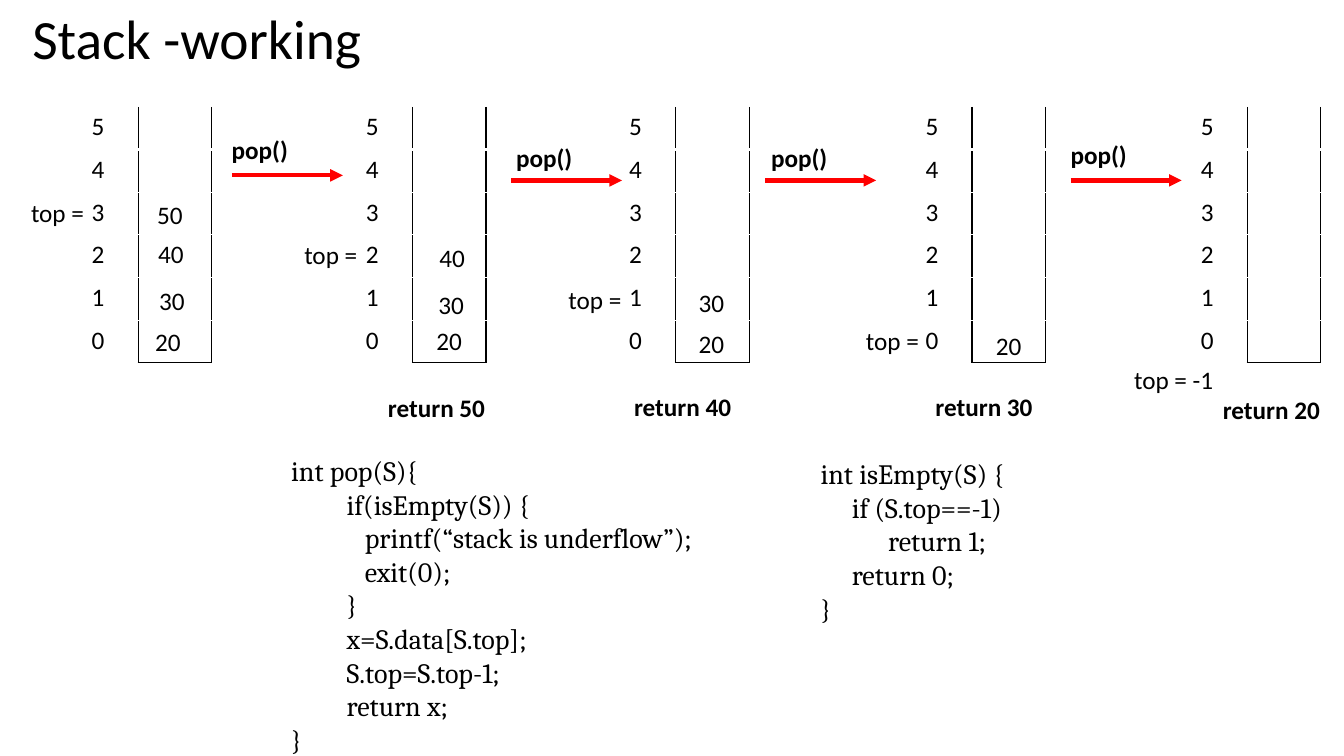
from lxml.etree import SubElement
from pptx import Presentation
from pptx.dml.color import RGBColor
from pptx.enum.shapes import MSO_CONNECTOR
from pptx.enum.text import MSO_ANCHOR, MSO_AUTO_SIZE, PP_ALIGN
from pptx.oxml import parse_xml
from pptx.oxml.ns import nsdecls, qn
from pptx.util import Pt

EMU_PER_PX = 9144
COLORS = {"ink": "000000", "paper": "FFFFFF", "arrow": "FF0000"}
SLOTS = 6
TABLE_TOP = 106

STACKS = [
    {"left": 81, "top": ("top =", 21, 191, 73), "values":
        [("50", 146, 193), ("40", 147, 232), ("30", 148, 278), ("20", 144, 319)]},
    {"left": 353, "top": ("top =", 292, 233, 73), "values":
        [("40", 426, 236), ("30", 425, 282), ("20", 423, 318)]},
    {"left": 614, "top": ("top =", 554, 277, 73), "values":
        [("30", 683, 280), ("20", 683, 321)]},
    {"left": 908, "top": ("top =", 849, 318, 73), "values": [("20", 978, 323)]},
    {"left": 1181, "top": ("top = -1", 1115, 357, 100), "values": []},
]
POPS = [(220, 128, 230, 174), (502, 136, 507, 179),
        (755, 136, 759, 179), (1052, 133, 1062, 179)]
RETURNS = [("return 50", 375, 384), ("return 40", 619, 383),
           ("return 30", 918, 383), ("return 20", 1203, 386)]
POP_CODE = [
    (0, "int pop(S){"),
    (55, "if(isEmpty(S)) {"),
    (73, "printf(“stack is underflow”);"),
    (73, "exit(0);"),
    (55, "}"),
    (55, "x=S.data[S.top];"),
    (55, "S.top=S.top-1;"),
    (55, "return x;"),
    (0, "}"),
]
EMPTY_CODE = [
    (0, "int isEmpty(S) {"),
    (31, "if (S.top==-1)"),
    (67, "return 1;"),
    (31, "return 0;"),
    (0, "}"),
]


def px(*lengths):
    return [length * EMU_PER_PX for length in lengths]


class StackSlide:
    def __init__(self, deck):
        self.page = deck.slides.add_slide(deck.slide_layouts[5])
        self.font = "Calibri"
        self.code_font = "Cambria"
        self.size = 18
        self.code_size = 20

    def add_span(self, para, text, size=None, font=None, bold=False):
        span = para.add_run()
        span.text = text
        span.font.name = font or self.font
        span.font.size = Pt(size or self.size)
        span.font.bold = bold
        span.font.color.rgb = RGBColor.from_string(COLORS["ink"])

    def title(self, text, *place):
        box = self.page.shapes.title
        box.left, box.top, box.width, box.height = px(*place)
        frame = box.text_frame
        frame.auto_size = MSO_AUTO_SIZE.NONE
        frame.vertical_anchor = MSO_ANCHOR.MIDDLE
        para = frame.paragraphs[0]
        para.alignment = PP_ALIGN.LEFT
        para.line_spacing = 0.9
        self.add_span(para, text, 39.6)

    def frame(self, *place, wrap=False):
        box = self.page.shapes.add_textbox(*px(*place))
        box.text_frame.word_wrap = wrap
        box.text_frame.auto_size = MSO_AUTO_SIZE.SHAPE_TO_FIT_TEXT
        return box.text_frame

    def label(self, text, left, top, width, bold=False):
        frame = self.frame(left, top, width, 40)
        self.add_span(frame.paragraphs[0], text, bold=bold)

    def code(self, lines, *place):
        frame = self.frame(*place, wrap=True)
        for number, (indent, text) in enumerate(lines):
            para = frame.add_paragraph() if number else frame.paragraphs[0]
            para._p.get_or_add_pPr().set("marL", str(indent * EMU_PER_PX))
            self.add_span(para, text, self.code_size, self.code_font)

    def arrow(self, left, top, length):
        line = self.page.shapes.add_connector(
            MSO_CONNECTOR.STRAIGHT, *px(left, top, left + length, top))
        line.line.color.rgb = RGBColor.from_string(COLORS["arrow"])
        line.line.width = Pt(3)
        SubElement(line.line._get_or_add_ln(), qn("a:tailEnd"), type="triangle")
        SubElement(line._element.spPr, qn("a:effectLst"))

    def borders(self, cell, edges):
        cell.fill.background()
        properties = cell._tc.get_or_add_tcPr()
        for position, side in enumerate("LRTB"):
            color, points = edges.get(side, (None, 0))
            paint = (f'<a:solidFill><a:srgbClr val="{COLORS[color]}"/></a:solidFill>'
                     if color else "<a:noFill/>")
            properties.insert(position, parse_xml(
                f'<a:ln{side} {nsdecls("a")} w="{Pt(points)}">{paint}</a:ln{side}>'))

    def stack(self, left):
        table = self.page.shapes.add_table(SLOTS, 2, *px(left, TABLE_TOP, 129, 254)).table
        table.first_row = table.horz_banding = False
        for column, width in zip(table.columns, px(56, 73)):
            column.width = width
        for row in range(SLOTS):
            index, slot = table.cell(row, 0), table.cell(row, 1)
            self.add_span(index.text_frame.paragraphs[0], str(SLOTS - 1 - row))
            self.borders(index, {"R": ("ink", 1)})
            edges = {"L": ("ink", 1), "R": ("ink", 1), "B": ("paper", 1)}
            if row == 0:
                edges["B"] = ("paper", 3)
            else:
                edges["T"] = ("paper", 1)
            if row == SLOTS - 1:
                edges["B"] = ("ink", 1)
            self.borders(slot, edges)


def main():
    deck = Presentation()
    deck.slide_width, deck.slide_height = px(1333, 750)
    slide = StackSlide(deck)
    slide.title("Stack -working", 22, 8, 1150, 66)
    for stack in STACKS:
        slide.stack(stack["left"])
        for value, left, top in stack["values"]:
            slide.label(value, left, top, 46)
        slide.label(*stack["top"])
    for text_left, text_top, arrow_left, arrow_top in POPS:
        slide.label("pop()", text_left, text_top, 76, bold=True)
        slide.arrow(arrow_left, arrow_top, 110)
    for text, left, top in RETURNS:
        slide.label(text, left, top, 123, bold=True)
    slide.code(POP_CODE, 279, 445, 431, 313)
    slide.code(EMPTY_CODE, 804, 448, 431, 178)
    deck.save("out.pptx")


if __name__ == "__main__":
    main()
